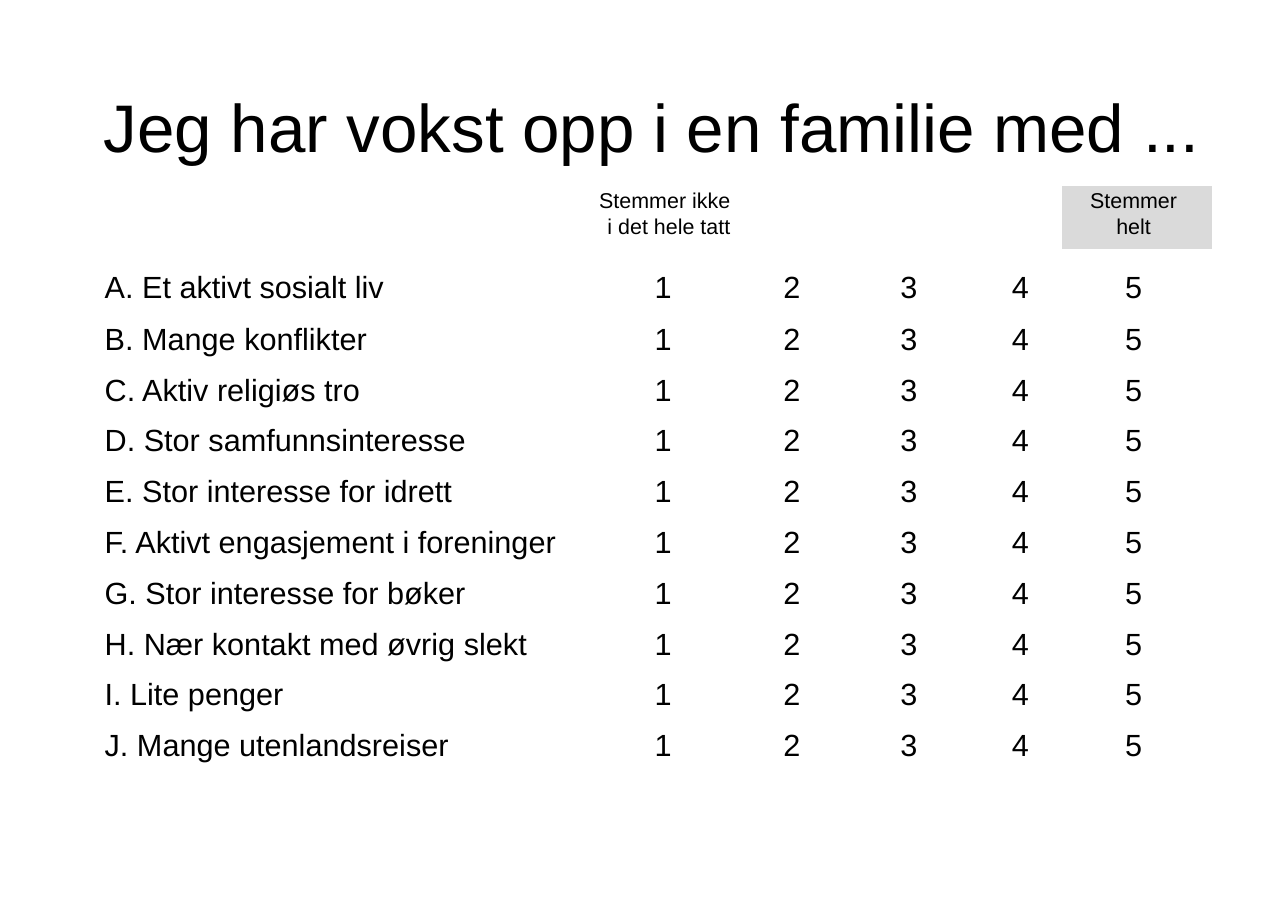
from pptx import Presentation
from pptx.dml.color import RGBColor
from pptx.enum.text import MSO_ANCHOR, PP_ALIGN
from pptx.util import Inches, Pt

LEFT, MID, RIGHT = PP_ALIGN.LEFT, PP_ALIGN.CENTER, PP_ALIGN.RIGHT
TOP, BOTTOM = MSO_ANCHOR.TOP, MSO_ANCHOR.BOTTOM
BLACK = RGBColor(0x00, 0x00, 0x00)
WHITE = RGBColor(0xFF, 0xFF, 0xFF)
GREY = RGBColor(0xDA, 0xDA, 0xDA)

TITLE = "Jeg har vokst opp i en familie med ..."
LOW, HIGH = "Stemmer ikke i det hele tatt", "Stemmer helt"
ITEMS = [
    "A. Et aktivt sosialt liv",
    "B. Mange konflikter",
    "C. Aktiv religiøs tro",
    "D. Stor samfunnsinteresse",
    "E. Stor interesse for idrett",
    "F. Aktivt engasjement i foreninger",
    "G. Stor interesse for bøker",
    "H. Nær kontakt med øvrig slekt",
    "I. Lite penger",
    "J. Mange utenlandsreiser",
]
SCALE = ["1", "2", "3", "4", "5"]

# Column width, alignment, left and right indent
COLS = [
    (4.28, LEFT, 0.03, 0),
    (1.67, MID, 0, 0.03),
    (0.85, LEFT, 0.24, 0),
    (1.04, MID, 0.02, 0),
    (0.87, RIGHT, 0, 0.29),
    (1.38, MID, 0, 0.06),
]
HIGH_COL = len(SCALE)
HEAD, FIRST, LAST, TALL = 0.59, 0.61, 0.38, 5.27
STEP = (TALL - HEAD - FIRST - LAST) / (len(ITEMS) - 2)
ROWS = [HEAD, FIRST] + [STEP] * (len(ITEMS) - 2) + [LAST]


def write(frame, text, size=20, align=LEFT, spacing=1.0, left=0, right=0):
    """Fill the frame with one paragraph, indented by left and right inches."""
    frame.word_wrap = True
    para = frame.paragraphs[0]
    para.alignment = align
    para.line_spacing = spacing
    props = para._p.get_or_add_pPr()
    props.set("marL", str(Inches(left)))
    props.set("marR", str(Inches(right)))
    props.set("indent", "0")
    run = para.add_run()
    run.text = text
    run.font.name = "Arial"
    run.font.size = Pt(size)
    run.font.color.rgb = BLACK


def inset(box, top=0, anchor=TOP):
    """Set the margins and anchor of a text frame or a cell."""
    box.margin_left = box.margin_right = box.margin_bottom = 0
    box.margin_top = Inches(top)
    box.vertical_anchor = anchor


def add_title(slide):
    box = slide.shapes.add_textbox(
        Inches(0.94), Inches(0.75), Inches(10.1), Inches(0.76))
    inset(box.text_frame, anchor=BOTTOM)
    write(box.text_frame, TITLE, size=44)


def add_grid(slide):
    wide = sum(col[0] for col in COLS)
    grid = slide.shapes.add_table(
        len(ROWS), len(COLS), Inches(0.92), Inches(1.68),
        Inches(wide), Inches(TALL)).table
    grid.first_row = grid.horz_banding = False
    for col, spec in zip(grid.columns, COLS):
        col.width = Inches(spec[0])
    for row, height in zip(grid.rows, ROWS):
        row.height = Inches(height)
    for cell in grid.iter_cells():
        cell.fill.background()

    low, high = grid.cell(0, 0), grid.cell(0, HIGH_COL)
    low.merge(grid.cell(0, 1))
    inset(low, top=0.02)
    write(low.text_frame, LOW, size=14, align=RIGHT, spacing=1.08,
          left=4.5, right=0.24)
    inset(high, top=0.02)
    write(high.text_frame, HIGH, size=14, align=MID, spacing=1.08,
          left=0.2, right=0.26)
    high.fill.solid()
    high.fill.fore_color.rgb = GREY

    for r, item in enumerate(ITEMS, 1):
        top = 0.19 if r == 1 else 0.05
        for c, text in enumerate([item] + SCALE):
            _, align, left, right = COLS[c]
            cell = grid.cell(r, c)
            inset(cell, top=top)
            write(cell.text_frame, text, align=align, left=left, right=right)


def main():
    deck = Presentation()
    deck.slide_width, deck.slide_height = Inches(11.69), Inches(8.28)
    slide = deck.slides.add_slide(deck.slide_layouts[6])
    slide.background.fill.solid()
    slide.background.fill.fore_color.rgb = WHITE
    add_title(slide)
    add_grid(slide)
    deck.save("out.pptx")


if __name__ == "__main__":
    main()
